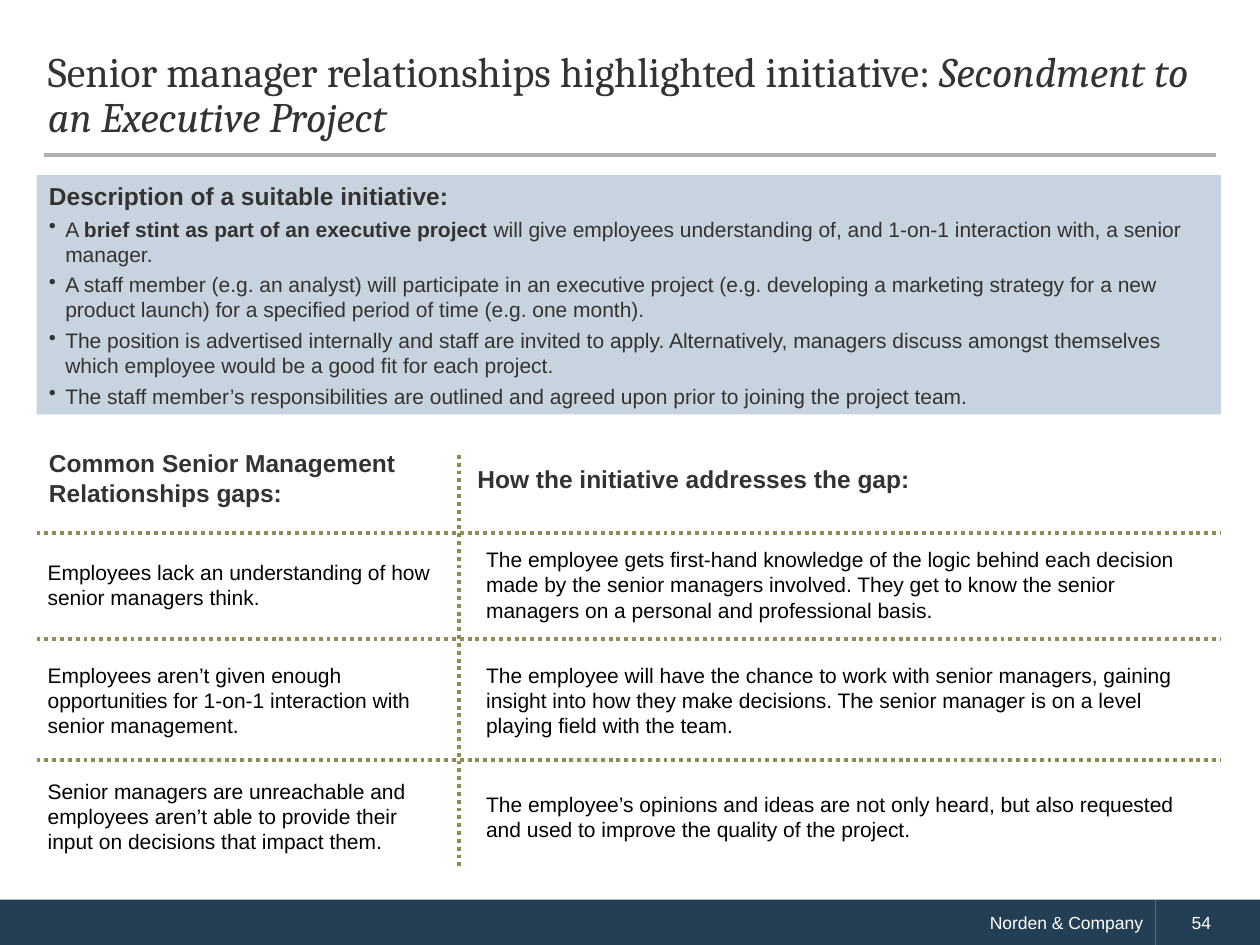
from dataclasses import dataclass
from lxml import etree
from pptx import Presentation
from pptx.dml.color import RGBColor
from pptx.enum import dml, shapes, text
from pptx.oxml import ns
from pptx.util import Inches, Pt


@dataclass(frozen=True)
class Theme:
    """Colours, fonts and type sizes of the slide."""
    ink: str = "333333"
    black: str = "000000"
    white: str = "FFFFFF"
    navy: str = "243F54"
    panel: str = "C7D3DE"
    rule: str = "B1B0AE"
    dots: str = "948A54"
    serif: str = "Cambria"
    sans: str = "Arial"
    title: int = 24
    head: int = 14
    body: int = 12
    foot: int = 10


T = Theme()

POINTS = [
    [("A ", False), ("brief stint as part of an executive project ", True),
     ("will give employees understanding of, and 1-on-1 interaction with, a senior manager.", False)],
    [("A staff member (e.g. an analyst) will participate in an executive project (e.g. developing "
      "a marketing strategy for a new product launch) for a specified period of time (e.g. one month).", False)],
    [("The position is advertised internally and staff are invited to apply. Alternatively, managers "
      "discuss amongst themselves which employee would be a good fit for each project.", False)],
    [("The staff member’s responsibilities are outlined and agreed upon prior to joining the project team.", False)],
]

HEADS = ["Common Senior Management Relationships gaps:", "How the initiative addresses the gap:"]

ROWS = [
    (4.64, ("Employees lack an understanding of how senior managers think.", 2),
     ("The employee gets first-hand knowledge of the logic behind each decision made by the senior "
      "managers involved. They get to know the senior managers on a personal and professional basis.", 3)),
    (5.56, ("Employees aren’t given enough opportunities for 1-on-1 interaction with senior management.", 3),
     ("The employee will have the chance to work with senior managers, gaining insight into how they "
      "make decisions. The senior manager is on a level playing field with the team.", 3)),
    (6.48, ("Senior managers are unreachable and employees aren’t able to provide their input on "
            "decisions that impact them.", 3),
     ("The employee’s opinions and ideas are not only heard, but also requested and used to improve "
      "the quality of the project.", 2)),
]


def add_run(para, words, size, color, bold=False, italic=False, face=T.sans):
    """Append one formatted run to a paragraph."""
    run = para.add_run()
    run.text = words
    font = run.font
    font.name, font.size, font.bold, font.italic = face, Pt(size), bold, italic
    font.color.rgb = RGBColor.from_string(color)


def add_rule(slide, start, end, color, width, dash=None):
    """Draw a straight line between two points."""
    line = slide.shapes.add_connector(
        shapes.MSO_CONNECTOR.STRAIGHT, *[Inches(v) for v in start + end])
    line.line.color.rgb = RGBColor.from_string(color)
    line.line.width = Pt(width)
    if dash:
        line.line.dash_style = dash
    etree.SubElement(line._element.spPr, ns.qn("a:effectLst"))


def add_panel(slide, box, color):
    """Draw a plain filled rectangle and return its text frame."""
    panel = slide.shapes.add_shape(shapes.MSO_SHAPE.RECTANGLE, *[Inches(v) for v in box])
    panel.shadow.inherit = False
    panel.fill.solid()
    panel.fill.fore_color.rgb = RGBColor.from_string(color)
    panel.line.fill.background()
    frame = panel.text_frame
    frame.word_wrap = True
    frame.vertical_anchor = text.MSO_ANCHOR.MIDDLE
    return frame


def add_label(slide, box, words, size, color, bold=False):
    """Place a wrapped text box that grows with its text."""
    frame = slide.shapes.add_textbox(*[Inches(v) for v in box]).text_frame
    frame.word_wrap = True
    frame.auto_size = text.MSO_AUTO_SIZE.SHAPE_TO_FIT_TEXT
    add_run(frame.paragraphs[0], words, size, color, bold)


def indent(para, left, first=0, mark=None):
    """Set the paragraph indents and an optional bullet."""
    props = para._p.get_or_add_pPr()
    props.set("marL", str(Inches(left)))
    props.set("indent", str(Inches(first)))
    if mark:
        etree.SubElement(props, ns.qn("a:buChar")).set("char", mark)


def add_title(slide, box):
    """Place the title and the rule beneath it."""
    left, top, width, height = box
    title = slide.shapes.title
    title.left, title.top, title.width, title.height = [Inches(v) for v in box]
    frame = title.text_frame
    frame.word_wrap = True
    frame.auto_size = text.MSO_AUTO_SIZE.NONE
    frame.vertical_anchor = text.MSO_ANCHOR.MIDDLE
    para = frame.paragraphs[0]
    para.alignment = text.PP_ALIGN.LEFT
    para.line_spacing = Pt(26)
    add_run(para, "Senior manager relationships highlighted initiative: ", T.title, T.ink, face=T.serif)
    add_run(para, "Secondment to an Executive Project", T.title, T.ink, italic=True, face=T.serif)
    base = top + height
    add_rule(slide, (left + 0.07, base), (left + width - 0.06, base), T.rule, 1.75)


def add_summary(slide, box):
    """Place the shaded description with its bullets."""
    frame = add_panel(slide, box, T.panel)
    head = frame.paragraphs[0]
    add_run(head, "Description of a suitable initiative:", T.head, T.ink, True)
    for point in POINTS:
        para = frame.add_paragraph()
        for words, bold in point:
            add_run(para, words, T.body, T.ink, bold)
    for para in frame.paragraphs:
        para.alignment = text.PP_ALIGN.LEFT
        para.space_before = Pt(3)
        if para._p is not head._p:
            indent(para, 0.13, -0.13, "•")


def add_grid(slide, box):
    """Place the gaps and answers with their dotted dividers."""
    left, top, width, height = box
    split = left + 3.35
    dots = dml.MSO_LINE.ROUND_DOT
    add_rule(slide, (split, top), (split, top + height), T.dots, 2.25, dots)
    for y in (4.23, 5.07, 6.03):
        add_rule(slide, (left, y), (left + width, y), T.dots, 2.25, dots)
    add_label(slide, (left, top - 0.1, 3.1, 0.57), HEADS[0], T.head, T.ink, True)
    add_label(slide, (split + 0.05, top + 0.02, 5.34, 0.34), HEADS[1], T.head, T.ink, True)
    columns = [(left - 0.01, 3.3), (split + 0.12, 5.93)]
    for middle, *cells in ROWS:
        for (x, span), (words, lines) in zip(columns, cells):
            tall = 0.1 + 0.2 * lines
            add_label(slide, (x, middle - tall / 2, span, tall), words, T.body, T.black)


def add_footer(slide, box):
    """Place the footer band with the firm and page number."""
    left, top, width, height = box
    split = 9.17
    parts = [
        (left, split - left, "Norden & Company", text.PP_ALIGN.RIGHT, 0.29),
        (split, left + width - split, "54", text.PP_ALIGN.LEFT, 0.19),
    ]
    for x, span, words, align, inset in parts:
        para = add_panel(slide, (x, top, span, height), T.navy).paragraphs[0]
        para.alignment = align
        indent(para, inset)
        add_run(para, words, T.foot, T.white)


def main():
    """Build the slide and save it."""
    deck = Presentation()
    deck.slide_width, deck.slide_height = Inches(10), Inches(7.5)
    slide = deck.slides.add_slide(deck.slide_layouts[5])
    add_footer(slide, (0, 7.14, 10, 0.37))
    add_title(slide, (0.28, 0.29, 9.43, 0.94))
    add_summary(slide, (0.29, 1.39, 9.4, 1.9))
    add_grid(slide, (0.29, 3.61, 9.4, 3.29))
    deck.save("out.pptx")


if __name__ == "__main__":
    main()
